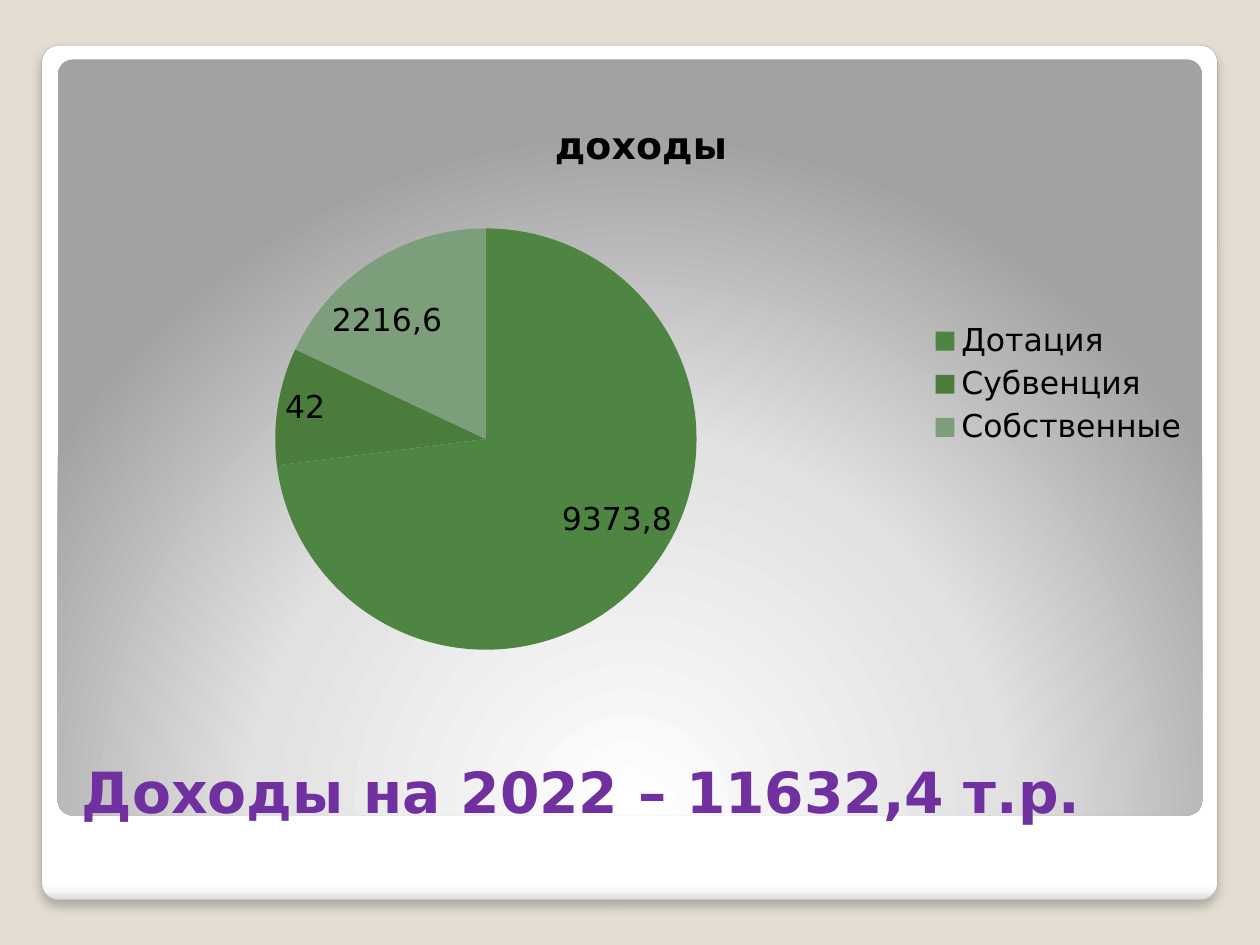
from typing import NamedTuple

from lxml.etree import SubElement
from pptx import Presentation
from pptx.chart.data import CategoryChartData
from pptx.dml.color import RGBColor
from pptx.enum.chart import XL_CHART_TYPE, XL_LABEL_POSITION, XL_LEGEND_POSITION
from pptx.enum.shapes import MSO_SHAPE
from pptx.enum.text import MSO_ANCHOR, MSO_AUTO_SIZE, PP_ALIGN
from pptx.oxml import parse_xml
from pptx.oxml.ns import nsdecls, qn
from pptx.util import Pt

FONT = "DejaVu Sans"


class Box(NamedTuple):
    left: float
    top: float
    width: float
    height: float


class Panel(NamedTuple):
    box: Box
    stops: list
    shade: str
    line: str = ""
    shadow: bool = False


class Slice(NamedTuple):
    name: str
    share: int
    label: str
    fill: str
    shift: tuple


PANELS = [
    Panel(Box(23.9, 25.9, 671.8, 488.2),
          [(0, "FFFFFF"), (98, "FFFFFF"), (99, "F7F7F7"), (100, "DADADA")],
          '<a:lin ang="5400000" scaled="0"/>', "A4A4A4", True),
    Panel(Box(33, 34, 654, 432),
          [(0, "FFFFFF"), (55, "E1E1E1"), (100, "A2A2A2")],
          '<a:path path="circle"><a:fillToRect l="50000" t="175000"'
          ' r="50000" b="-75000"/></a:path>'),
]
SLICES = [
    Slice("Дотация", 73, "9373,8", "4E8542", (0.03, -0.06)),
    Slice("Субвенция", 9, "42", "4A7C3C", (0, -0.03)),
    Slice("Собственные", 18, "2216,6", "7D9E7A", (-0.04, 0.06)),
]
TITLE = Box(39.6, 392.4, 644.4, 82.8)
CHART = Box(42.5, 54.7, 644.4, 329.8)


def color(text: str) -> RGBColor:
    return RGBColor.from_string(text)


def place(box: Box) -> list:
    return [Pt(side) for side in box]


def style(font, size: float, fill: str = "000000", bold: bool = False) -> None:
    values = {"name": FONT, "size": Pt(size), "bold": bold}
    for key, value in values.items():
        setattr(font, key, value)
    font.color.rgb = color(fill)


def draw_panel(slide, panel: Panel) -> None:
    shape = slide.shapes.add_shape(MSO_SHAPE.ROUNDED_RECTANGLE, *place(panel.box))
    shape.adjustments[0] = 0.02
    shape.shadow.inherit = False
    if panel.line:
        shape.line.color.rgb = color(panel.line)
        shape.line.width = Pt(0.16)
    else:
        shape.line.fill.background()
    stops = "".join(f'<a:gs pos="{pos * 1000}"><a:srgbClr val="{fill}"/></a:gs>'
                    for pos, fill in panel.stops)
    props = shape._element.spPr
    props.find(qn("a:prstGeom")).addnext(parse_xml(
        f'<a:gradFill {nsdecls("a")} rotWithShape="1"><a:gsLst>{stops}</a:gsLst>'
        f'{panel.shade}</a:gradFill>'))
    if panel.shadow:
        props.find(qn("a:effectLst")).append(parse_xml(
            f'<a:outerShdw {nsdecls("a")} blurRad="{Pt(6)}" dist="{Pt(4)}"'
            ' dir="5400000" algn="t" rotWithShape="0"><a:srgbClr val="000000">'
            '<a:alpha val="25000"/></a:srgbClr></a:outerShdw>'))


def draw_title(slide, text: str) -> None:
    title = slide.shapes.title
    slide.shapes._spTree.append(title._element)
    for key, value in zip(Box._fields, place(TITLE)):
        setattr(title, key, value)
    frame = title.text_frame
    values = {"text": text, "word_wrap": True, "vertical_anchor": MSO_ANCHOR.BOTTOM,
              "auto_size": MSO_AUTO_SIZE.NONE}
    for key, value in values.items():
        setattr(frame, key, value)
    line = frame.paragraphs[0]
    line.alignment = PP_ALIGN.LEFT
    style(line.runs[0].font, 32.4, "7030A0", True)


def fix_layout(node, edge: bool = True, **sizes: float) -> None:
    """Place a chart part by fractions of the chart, from its edge or as a shift."""
    for old in node.findall(qn("c:layout")):
        node.remove(old)
    layout = parse_xml(f'<c:layout {nsdecls("c")}/>')
    before = node.find(qn("c:idx"))
    if before is None:
        before = node.find(qn("c:tx"))
    if before is None:
        node.insert(0, layout)
    else:
        before.addnext(layout)
    manual = SubElement(layout, qn("c:manualLayout"))
    if "w" in sizes:
        SubElement(manual, qn("c:layoutTarget")).set("val", "inner")
    if edge:
        for key in ("xMode", "yMode"):
            SubElement(manual, qn(f"c:{key}")).set("val", "edge")
    for key, value in sizes.items():
        SubElement(manual, qn(f"c:{key}")).set("val", str(value))


def draw_pie(slide) -> None:
    data = CategoryChartData()
    data.categories = [part.name for part in SLICES]
    data.add_series("Series 1", [part.share for part in SLICES] + [0])
    chart = slide.shapes.add_chart(XL_CHART_TYPE.PIE, *place(CHART), data).chart
    style(chart.font, 18)

    chart.has_title = True
    head = chart.chart_title.text_frame
    head.text = "доходы"
    style(head.paragraphs[0].runs[0].font, 21.6, bold=True)
    fix_layout(chart.chart_title._element, x=0.42, y=0.03)

    chart.has_legend = True
    legend = chart.legend
    legend.position = XL_LEGEND_POSITION.RIGHT
    legend.include_in_layout = False
    style(legend.font, 18)
    # The zero value has no category, so it gets no legend entry.
    legend._element.find(qn("c:legendPos")).addnext(parse_xml(
        f'<c:legendEntry {nsdecls("c")}><c:idx val="{len(SLICES)}"/>'
        '<c:delete val="1"/></c:legendEntry>'))

    plot = chart.plots[0]
    plot.vary_by_categories = True
    for index, part in enumerate(SLICES):
        point = plot.series[0].points[index]
        point.format.fill.solid()
        point.format.fill.fore_color.rgb = color(part.fill)
        point.format.line.fill.background()
        label = point.data_label
        label.text_frame.text = part.label
        style(label.text_frame.paragraphs[0].runs[0].font, 18)
        label.position = XL_LABEL_POSITION.INSIDE_END
        right, down = part.shift
        fix_layout(label._dLbl, edge=False, x=right, y=down)
    # Labels belong to the named slices only.
    marks = plot.series[0]._element.find(qn("c:dLbls"))
    for key in ("showVal", "showPercent", "showCatName", "showLeaderLines"):
        flag = marks.find(qn(f"c:{key}"))
        if flag is not None:
            flag.set("val", "0")
    fix_layout(chart._chartSpace.chart.plotArea, x=0.17, y=0.23, w=0.39, h=0.73)


def main() -> None:
    deck = Presentation()
    deck.slide_width, deck.slide_height = Pt(720), Pt(540)
    slide = deck.slides.add_slide(deck.slide_layouts[5])
    slide.background.fill.solid()
    slide.background.fill.fore_color.rgb = color("E3DED1")
    for panel in PANELS:
        draw_panel(slide, panel)
    draw_title(slide, "Доходы на 2022 – 11632,4 т.р.")
    draw_pie(slide)
    deck.save("out.pptx")


if __name__ == "__main__":
    main()
